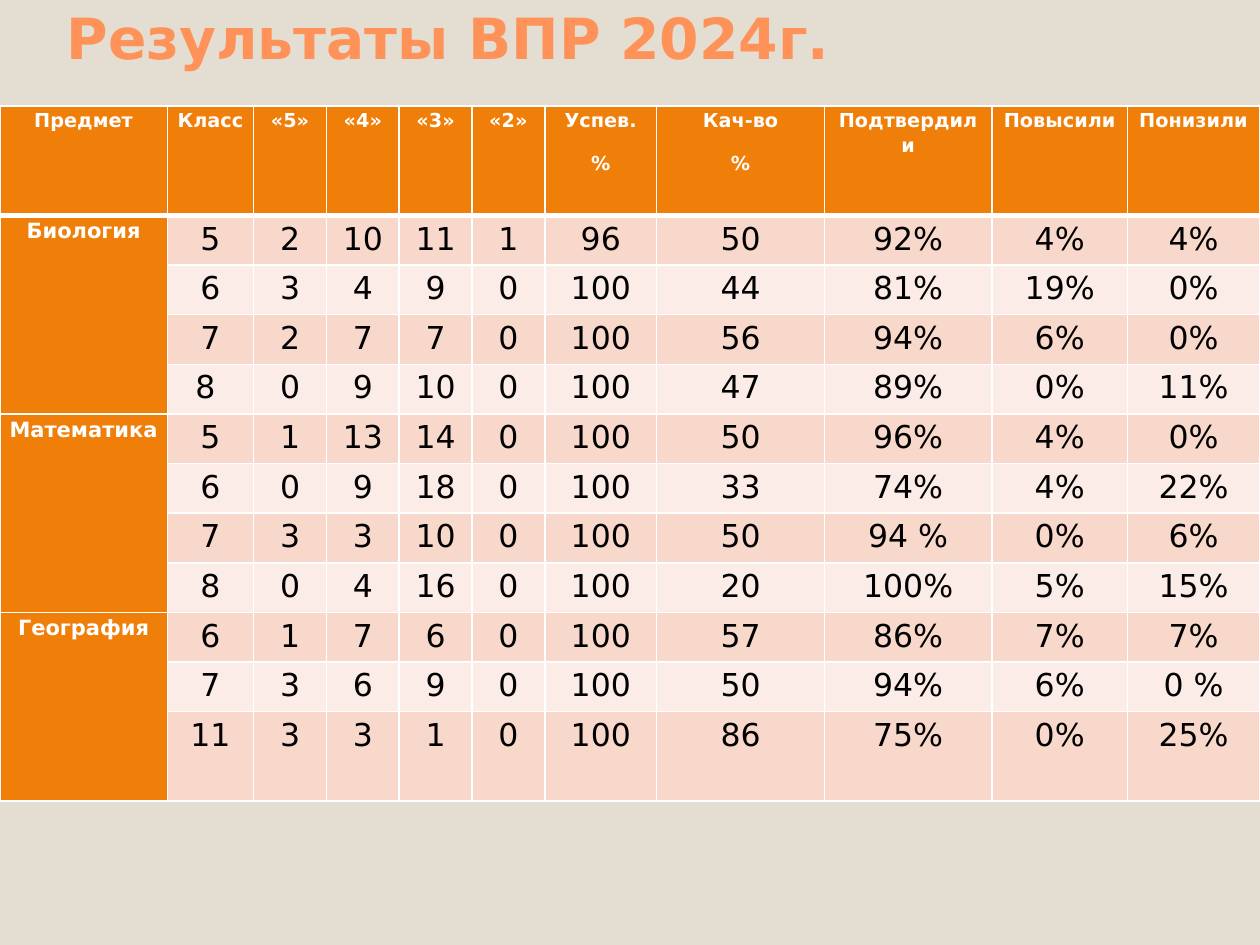
from lxml import etree
from pptx import Presentation
from pptx import util as u
from pptx.dml.color import RGBColor
from pptx.enum import text
from pptx.oxml import ns

FONT = "DejaVu Sans"
COLORS = {"page": "E3DED1", "title": "FF9258", "accent": "F07F09",
          "band_dark": "F9D8CC", "band_light": "FCECE7",
          "white": "FFFFFF", "black": "000000"}
HEADER = {"size": u.Pt(11), "bold": True, "color": "white"}
SUBJECT = {"size": u.Pt(12), "bold": True, "color": "white"}
VALUE = {"size": u.Pt(18), "bold": False, "color": "black"}
TITLE = {"size": u.Pt(32.4), "bold": True, "color": "title"}

HEADINGS = ["Предмет", "Класс", "«5»", "«4»", "«3»", "«2»", "Успев.\n%",
            "Кач-во\n%", "Подтвердили", "Повысили", "Понизили"]
RESULTS = {
    "Биология": [
        ["5", "2", "10", "11", "1", "96", "50", "92%", "4%", "4%"],
        ["6", "3", "4", "9", "0", "100", "44", "81%", "19%", "0%"],
        ["7", "2", "7", "7", "0", "100", "56", "94%", "6%", "0%"],
        ["8 ", "0", "9", "10", "0", "100", "47", "89%", "0%", "11%"],
    ],
    "Математика": [
        ["5", "1", "13", "14", "0", "100", "50", "96%", "4%", "0%"],
        ["6", "0", "9", "18", "0", "100", "33", "74%", "4%", "22%"],
        ["7", "3", "3", "10", "0", "100", "50", "94 %", "0%", "6%"],
        ["8", "0", "4", "16", "0", "100", "20", "100%", "5%", "15%"],
    ],
    "География": [
        ["6", "1", "7", "6", "0", "100", "57", "86%", "7%", "7%"],
        ["7", "3", "6", "9", "0", "100", "50", "94%", "6%", "0 %"],
        ["11", "3", "3", "1", "0", "100", "86", "75%", "0%", "25%"],
    ],
}
COLUMN_WIDTHS = [95.6, 49.4] + [41.6] * 4 + [64, 95.8, 95.8, 77.4, 75.6]
ROW_HEIGHTS = [62.7] + [28.35] * 10 + [51]


def write(frame, words, style, **paragraph_format):
    """Fill a text frame, one paragraph per line of words."""
    frame.text = words
    for para in frame.paragraphs:
        for name, value in paragraph_format.items():
            setattr(para, name, value)
        for span in para.runs:
            span.font.name = FONT
            span.font.size = style["size"]
            span.font.bold = style["bold"]
            span.font.color.rgb = RGBColor.from_string(COLORS[style["color"]])


def fill_cell(cell, words, style, fill, edges):
    """Style one cell; edges maps border tags to widths in points."""
    properties = cell._tc.get_or_add_tcPr()
    for tag, width in edges.items():
        line = etree.SubElement(properties, ns.qn(f"a:{tag}"), w=str(u.Pt(width)))
        solid = etree.SubElement(line, ns.qn("a:solidFill"))
        etree.SubElement(solid, ns.qn("a:srgbClr"), val=COLORS["white"])
    cell.fill.solid()
    cell.fill.fore_color.rgb = RGBColor.from_string(COLORS[fill])
    cell.margin_left = cell.margin_right = u.Pt(5)
    cell.margin_top = cell.margin_bottom = 0
    write(cell.text_frame, words, style, alignment=text.PP_ALIGN.CENTER,
          line_spacing=1.15, space_after=u.Pt(10))


deck = Presentation()
deck.slide_width, deck.slide_height = u.Pt(720), u.Pt(540)
page = deck.slides.add_slide(deck.slide_layouts[6])
page.background.fill.solid()
page.background.fill.fore_color.rgb = RGBColor.from_string(COLORS["page"])

box = page.shapes.add_textbox(u.Pt(31), u.Pt(9.4), u.Pt(644.4), u.Pt(33.8))
frame_format = {"word_wrap": True, "vertical_anchor": text.MSO_ANCHOR.BOTTOM,
                "margin_top": u.Pt(2.5), "margin_bottom": u.Pt(2.5)}
for name, value in frame_format.items():
    setattr(box.text_frame, name, value)
write(box.text_frame, "Результаты ВПР 2024г.", TITLE)

table = page.shapes.add_table(len(ROW_HEIGHTS), len(COLUMN_WIDTHS), 0, u.Pt(60.5),
                              u.Pt(720), u.Pt(sum(ROW_HEIGHTS))).table
for column, width in zip(table.columns, COLUMN_WIDTHS):
    column.width = u.Pt(width)
for row, height in zip(table.rows, ROW_HEIGHTS):
    row.height = u.Pt(height)

for column, heading in enumerate(HEADINGS):
    fill_cell(table.cell(0, column), heading, HEADER, "accent",
              {"lnL": 1, "lnR": 1, "lnT": 1, "lnB": 3})

row = 1
for subject, classes in RESULTS.items():
    table.cell(row, 0).merge(table.cell(row + len(classes) - 1, 0))
    for index, values in enumerate(classes):
        edges = {"lnL": 1, "lnR": 1, "lnT": 3 if row == 1 else 1, "lnB": 1}
        fill_cell(table.cell(row, 0), "" if index else subject, SUBJECT, "accent", edges)
        band = "band_dark" if row % 2 else "band_light"
        for column, value in enumerate(values, start=1):
            fill_cell(table.cell(row, column), value, VALUE, band, edges)
        row += 1

deck.save("out.pptx")
